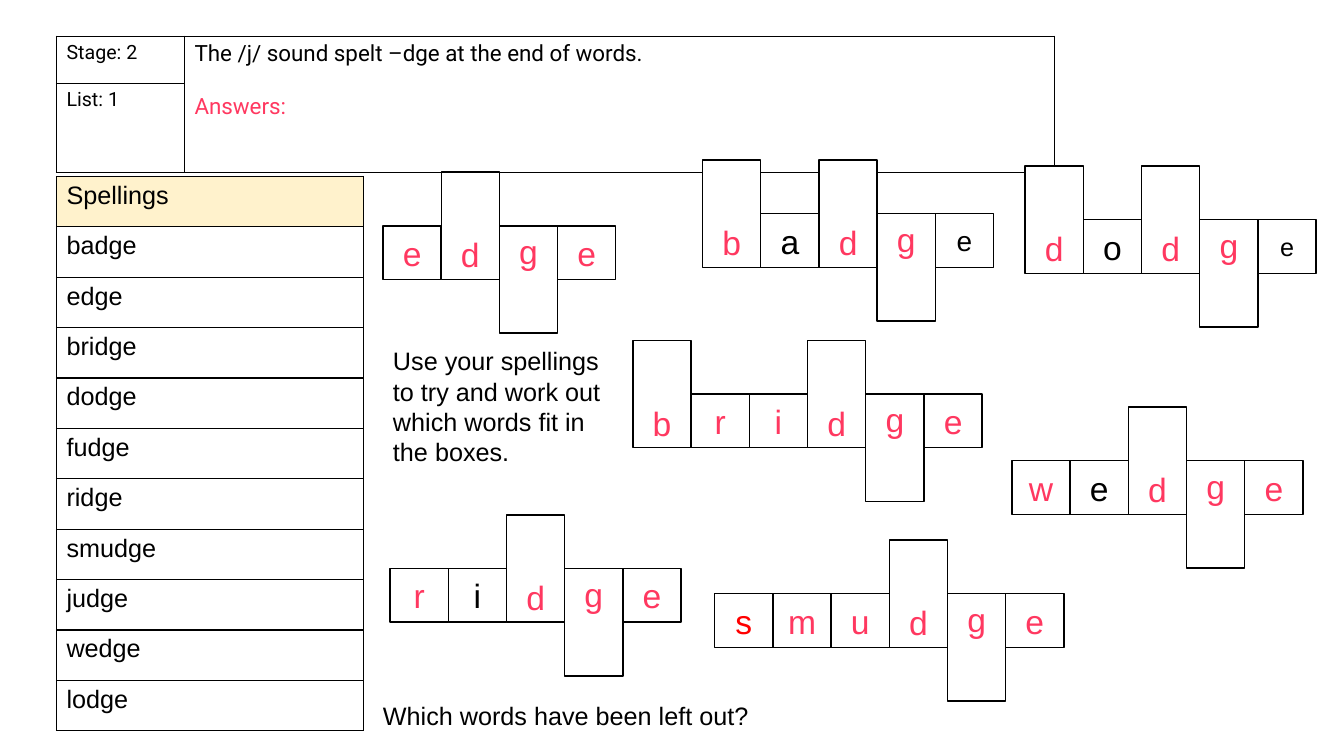
"""Build the answer slide for words that end in -dge."""
from dataclasses import dataclass, field

from lxml.etree import SubElement
from pptx import Presentation
from pptx.dml.color import RGBColor
from pptx.enum.shapes import MSO_SHAPE
from pptx.enum.text import MSO_ANCHOR, PP_ALIGN
from pptx.oxml.ns import qn
from pptx.slide import Slide
from pptx.table import Table, _Cell
from pptx.text.text import _Paragraph
from pptx.util import Inches, Pt

HUES = {"ink": "000000", "pink": "FF3860", "red": "FF0000",
        "paper": "FFFFFF", "cream": "FFF2CC"}
WIDE, HIGH = 13.33, 7.5
TILE_W, TILE_H = 4.33, 7.1
SPELLINGS = ["badge", "edge", "bridge", "dodge", "fudge", "ridge",
             "smudge", "judge", "wedge", "lodge"]


@dataclass(frozen=True)
class Style:
    """Look of one run."""
    size: int = 24
    hue: str = "pink"
    font: str = "Arial"


@dataclass(frozen=True)
class Word:
    """Word in tiles, placed in percent of the slide, with styles by letter index."""
    text: str
    left: float
    top: float
    marks: dict[int, Style] = field(default_factory=dict)


@dataclass(frozen=True)
class Note:
    """Text box placed in percent of the slide."""
    text: str
    left: float
    top: float
    width: float
    height: float


INK = Style(hue="ink")
BODY = Style(18, "ink")
LABEL = Style(14, "ink", "Roboto")
TITLE = Style(16, "ink", "Roboto")
ANSWER = Style(16, "pink", "Roboto")

WORDS = [
    Word("edge", 28.5, 29.87),
    Word("badge", 52.28, 28.27, {1: INK, 4: Style(20, "ink")}),
    Word("dodge", 76.28, 29.07, {1: INK, 4: BODY}),
    Word("bridge", 47.1, 52.13),
    Word("wedge", 75.3, 60.95, {1: INK}),
    Word("ridge", 29.03, 75.2, {1: INK}),
    Word("smudge", 53.18, 78.53, {0: Style(hue="red")}),
]
NOTES = [
    Note("Use your spellings to try and work out which words fit in the boxes.",
         28.5, 45.07, 18.45, 21.6),
    Note("Which words have been left out?", 27.75, 92, 64.95, 5.33),
]


def across(share: float) -> int:
    """Turn a percent of the slide width into a length."""
    return Inches(WIDE * share / 100)


def down(share: float) -> int:
    """Turn a percent of the slide height into a length."""
    return Inches(HIGH * share / 100)


def paint(hue: str) -> RGBColor:
    """Look up a colour by name."""
    return RGBColor.from_string(HUES[hue])


def write(para: _Paragraph, text: str, style: Style) -> None:
    """Add one styled run to a paragraph."""
    run = para.add_run()
    run.text = text
    run.font.size = Pt(style.size)
    run.font.name = style.font
    run.font.color.rgb = paint(style.hue)


def edge(cell: _Cell) -> None:
    """Give a cell black one-point borders and no fill."""
    props = cell._tc.get_or_add_tcPr()
    for side in ("a:lnL", "a:lnR", "a:lnT", "a:lnB"):
        line = SubElement(props, qn(side), w=str(Pt(1)))
        fill = SubElement(line, qn("a:solidFill"))
        SubElement(fill, qn("a:srgbClr"), val=HUES["ink"])
    cell.fill.background()


def add_grid(slide: Slide, left: float, top: float,
             cols: list[float], rows: list[float]) -> Table:
    """Add a plain ruled table sized in percent of the slide."""
    table = slide.shapes.add_table(len(rows), len(cols), across(left), down(top),
                                   across(sum(cols)), down(sum(rows))).table
    table.first_row = table.horz_banding = False
    for col, share in zip(table.columns, cols):
        col.width = across(share)
    for row, share in zip(table.rows, rows):
        row.height = down(share)
    for cell in table.iter_cells():
        edge(cell)
    return table


def add_list(slide: Slide) -> None:
    """Add the list of spellings."""
    texts = ["Spellings", *SPELLINGS]
    table = add_grid(slide, 4.2, 23.33, [22.87], [6.67] * len(texts))
    for row, text in enumerate(texts):
        write(table.cell(row, 0).text_frame.paragraphs[0], text, BODY)
    head = table.cell(0, 0)
    head.fill.solid()
    head.fill.fore_color.rgb = paint("cream")


def add_head(slide: Slide) -> None:
    """Add the heading table."""
    table = add_grid(slide, 4.2, 4.8, [9.53, 64.74], [6.27, 11.6])
    for row, text in enumerate(["Stage: 2", "List: 1"]):
        write(table.cell(row, 0).text_frame.paragraphs[0], text, LABEL)
    table.cell(0, 1).merge(table.cell(1, 1))
    frame = table.cell(0, 1).text_frame
    write(frame.paragraphs[0], "The /j/ sound spelt –dge at the end of words.", TITLE)
    para = frame.add_paragraph()
    para.space_before = Pt(19)
    write(para, "Answers:", ANSWER)


def add_tile(slide: Slide, left: float, top: float, char: str, style: Style) -> None:
    """Add one letter tile, tall for letters that rise or hang."""
    rise, hang = char in "bd", char == "g"
    tall = TILE_H * (2 if rise or hang else 1)
    tile = slide.shapes.add_shape(
        MSO_SHAPE.RECTANGLE, across(left), down(top - (TILE_H if rise else 0)),
        across(TILE_W), down(tall))
    tile.shadow.inherit = False
    tile.fill.solid()
    tile.fill.fore_color.rgb = paint("paper")
    tile.line.color.rgb = paint("ink")
    tile.line.width = Pt(1)
    frame = tile.text_frame
    frame.vertical_anchor = (MSO_ANCHOR.BOTTOM if rise else
                             MSO_ANCHOR.TOP if hang else MSO_ANCHOR.MIDDLE)
    para = frame.paragraphs[0]
    para.alignment = PP_ALIGN.CENTER
    write(para, char, style)


def add_word(slide: Slide, word: Word) -> None:
    """Add a word as a row of tiles."""
    for spot, char in enumerate(word.text):
        add_tile(slide, word.left + spot * TILE_W, word.top, char,
                 word.marks.get(spot, Style()))


def add_note(slide: Slide, note: Note) -> None:
    """Add a wrapped text box."""
    box = slide.shapes.add_textbox(across(note.left), down(note.top),
                                   across(note.width), down(note.height))
    box.text_frame.word_wrap = True
    write(box.text_frame.paragraphs[0], note.text, BODY)


def main() -> None:
    """Build and save the slide."""
    deck = Presentation()
    deck.slide_width, deck.slide_height = Inches(WIDE), Inches(HIGH)
    slide = deck.slides.add_slide(deck.slide_layouts[6])
    add_list(slide)
    add_head(slide)
    for word in WORDS:
        add_word(slide, word)
    for note in NOTES:
        add_note(slide, note)
    deck.save("out.pptx")


if __name__ == "__main__":
    main()
